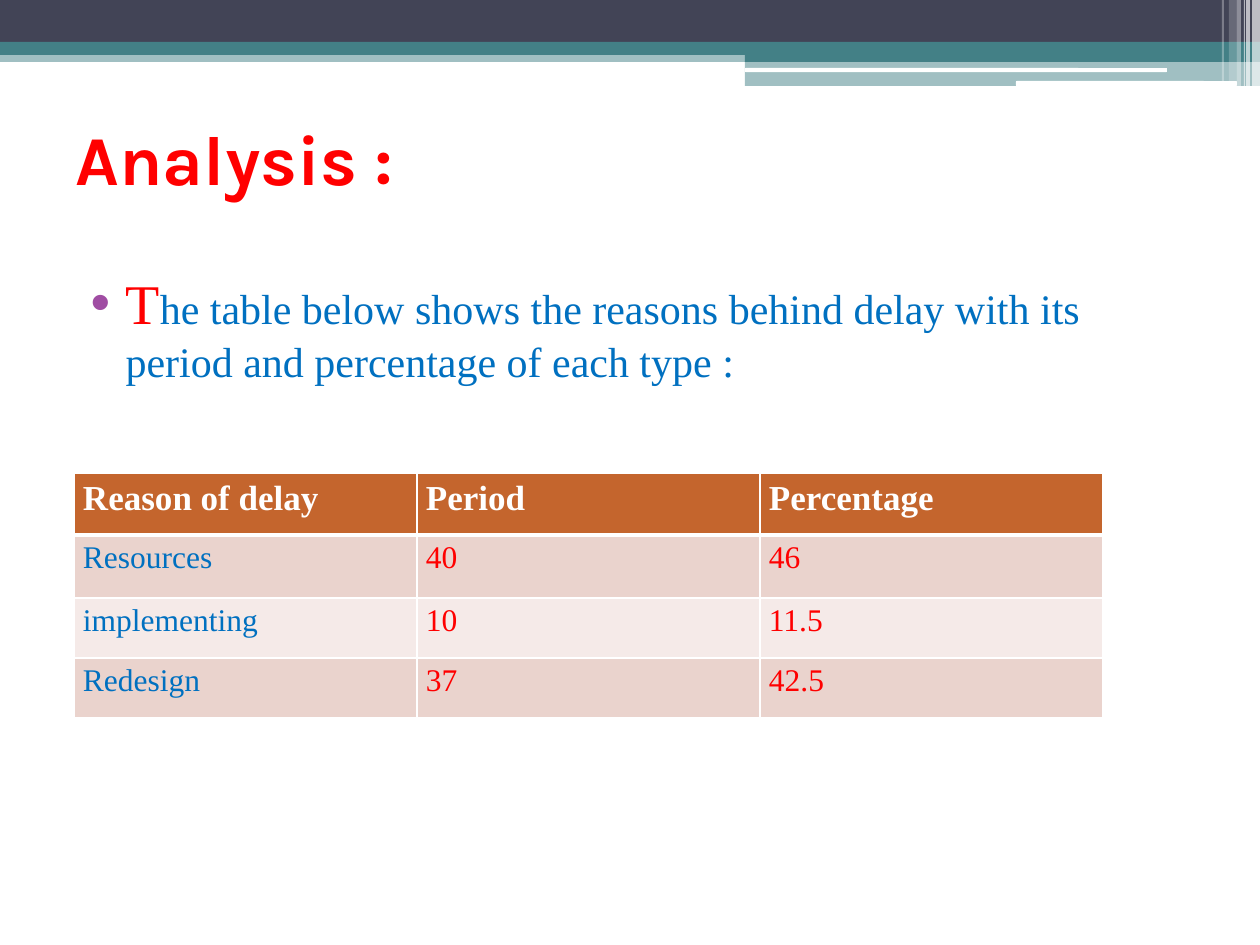
"""Builds the Analysis slide: header bands, title, lead sentence and delay table."""
from lxml.etree import SubElement
from pptx import Presentation
from pptx.dml.color import RGBColor
from pptx.enum.shapes import MSO_SHAPE as Shape
from pptx.enum.text import MSO_ANCHOR as Anchor, MSO_AUTO_SIZE as AutoSize, PP_ALIGN as Align
from pptx.oxml.ns import qn
from pptx.util import Emu, Pt

WHITE = RGBColor(0xFF, 0xFF, 0xFF)
RED = RGBColor(0xFF, 0x00, 0x00)
BLUE = RGBColor(0x00, 0x70, 0xC0)
SLATE = RGBColor(0x42, 0x44, 0x56)
TEAL = RGBColor(0x43, 0x80, 0x86)
PURPLE = RGBColor(0xA0, 0x4D, 0xA3)
ORANGE = RGBColor(0xC4, 0x65, 0x2D)
ROSE = RGBColor(0xEA, 0xD3, 0xCD)
PALE_ROSE = RGBColor(0xF5, 0xEA, 0xE8)
SERIF = "Times New Roman"

BANDS = [
    (Shape.RECTANGLE, (0, 50, 1260, 12), TEAL, 50),
    (Shape.RECTANGLE, (0, 0, 1260, 42), SLATE, 100),
    (Shape.RECTANGLE, (0, 42, 1260, 13), TEAL, 100),
    (Shape.RECTANGLE, (745, 49, 515, 13), TEAL, 100),
    (Shape.RECTANGLE, (745, 61, 515, 25), TEAL, 50),
    (Shape.ROUNDED_RECTANGLE, (745, 68, 422, 4), WHITE, 100),
    (Shape.ROUNDED_RECTANGLE, (1016, 81, 221, 5), WHITE, 100),
]
STRIPES = [(1252, 8, 86, 65), (1246, 4, 86, 65), (1244, 1, 86, 60),
           (1237, 4, 86, 40), (1229, 8, 81, 20), (1222, 2, 81, 30)]
BANDS += [(Shape.RECTANGLE, (left, 0, width, height), WHITE, opacity)
          for left, width, height, opacity in STRIPES]

TITLE = "Analysis :"
TITLE_BOX = (63, 84, 1134, 147)
TITLE_FORMAT = {"name": "Karla", "size": Pt(40), "bold": True}
BODY_BOX = (63, 262, 1134, 596)
LEAD = [
    ("T", RED, {"name": SERIF, "size": Pt(32)}),
    ("he table below shows the reasons behind delay with its period and percentage of each type :",
     BLUE, {"name": SERIF, "size": Pt(24)}),
]

TABLE_ORIGIN = (74, 473)
COLUMN_WIDTH = 343
ROW_HEIGHTS = [62, 63, 60, 60]
ROWS = [
    ("Reason of delay", "Period", "Percentage"),
    ("Resources", "40", "46"),
    ("implementing", "10", "11.5"),
    ("Redesign", "37", "42.5"),
]
HEADER_FORMAT = {"name": SERIF, "size": Pt(20), "bold": True}
CELL_FORMAT = {"name": SERIF, "size": Pt(18), "bold": False}


def px(length):
    return Emu(round(length * 914400 / 126))


def apply_format(target, values):
    for name, value in values.items():
        setattr(target, name, value)


def add_run(paragraph, text, color, values):
    run = paragraph.add_run()
    run.text = text
    apply_format(run.font, values)
    run.font.color.rgb = color


def place(shape, box):
    apply_format(shape, dict(zip(("left", "top", "width", "height"), map(px, box))))


def add_band(slide, kind, box, color, opacity):
    shape = slide.shapes.add_shape(kind, *map(px, box))
    shape.shadow.inherit = False
    shape.line.fill.background()
    shape.fill.solid()
    shape.fill.fore_color.rgb = color
    if opacity < 100:
        fill_color = shape.fill._xPr.find(qn("a:solidFill"))[0]
        SubElement(fill_color, qn("a:alpha"), val=str(opacity * 1000))


def add_bullet(paragraph):
    properties = paragraph._p.get_or_add_pPr()
    properties.set("marL", str(px(50)))
    properties.set("indent", str(px(-35)))
    bullet_color = SubElement(properties, qn("a:buClr"))
    SubElement(bullet_color, qn("a:srgbClr"), val=str(PURPLE))
    SubElement(properties, qn("a:buChar"), char="•")


def set_borders(cell, widths):
    properties = cell._tc.get_or_add_tcPr()
    for side, width in widths.items():
        line = SubElement(properties, qn(f"a:ln{side}"), w=str(Pt(width)))
        fill = SubElement(line, qn("a:solidFill"))
        SubElement(fill, qn("a:srgbClr"), val=str(WHITE))


def add_delay_table(slide):
    columns = len(ROWS[0])
    size = (COLUMN_WIDTH * columns, sum(ROW_HEIGHTS))
    table = slide.shapes.add_table(len(ROWS), columns, *map(px, TABLE_ORIGIN + size)).table
    for column in table.columns:
        column.width = px(COLUMN_WIDTH)
    for r, (texts, height) in enumerate(zip(ROWS, ROW_HEIGHTS)):
        table.rows[r].height = px(height)
        for c, text in enumerate(texts):
            cell = table.cell(r, c)
            set_borders(cell, {"L": 1, "R": 1, "T": 3 if r == 1 else 1, "B": 1 if r else 3})
            cell.fill.solid()
            cell.fill.fore_color.rgb = (PALE_ROSE, ROSE)[r % 2] if r else ORANGE
            apply_format(cell, {"margin_left": px(9), "margin_right": px(9),
                                "margin_top": 0, "margin_bottom": 0})
            paragraph = cell.text_frame.paragraphs[0]
            paragraph.line_spacing = 1.15
            color = WHITE if r == 0 else RED if c else BLUE
            add_run(paragraph, text, color, CELL_FORMAT if r else HEADER_FORMAT)


def main():
    presentation = Presentation()
    presentation.slide_width, presentation.slide_height = px(1260), px(945)
    slide = presentation.slides.add_slide(presentation.slide_layouts[1])
    for band in BANDS:
        add_band(slide, *band)

    title, body = slide.placeholders
    place(title, TITLE_BOX)
    apply_format(title.text_frame, {"vertical_anchor": Anchor.MIDDLE, "auto_size": AutoSize.NONE})
    heading = title.text_frame.paragraphs[0]
    heading.alignment = Align.LEFT
    add_run(heading, TITLE, RED, TITLE_FORMAT)

    place(body, BODY_BOX)
    body.text_frame.auto_size = AutoSize.NONE
    lead = body.text_frame.paragraphs[0]
    add_bullet(lead)
    lead.space_before = Pt(0)
    for piece in LEAD:
        add_run(lead, *piece)

    add_delay_table(slide)
    presentation.save("out.pptx")


if __name__ == "__main__":
    main()
